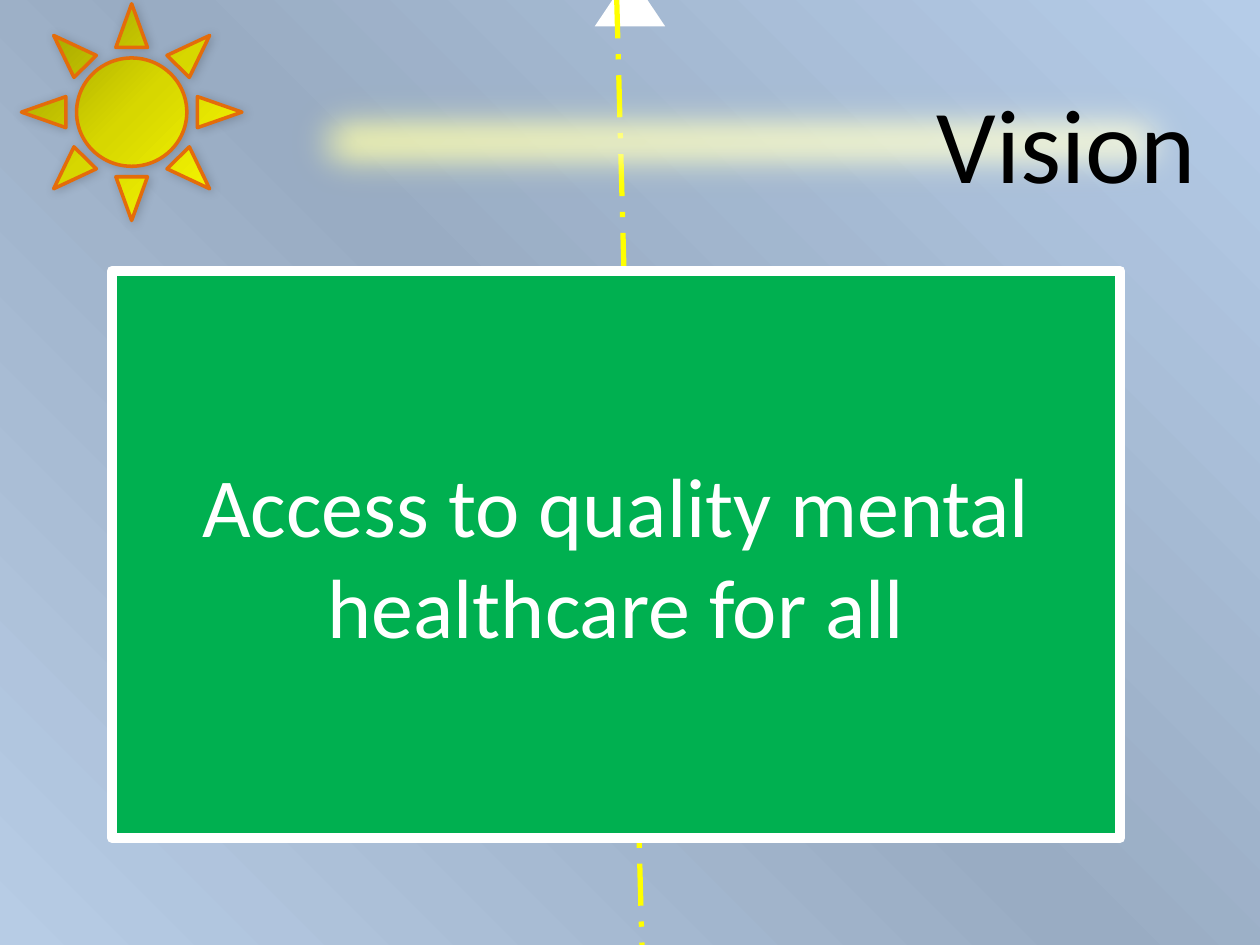
import pptx
import pptx.util
import pptx.dml.color
import pptx.enum.dml
import pptx.enum.shapes
import pptx.enum.text
import pptx.oxml
import pptx.oxml.ns

Inches = pptx.util.Inches
Shapes = pptx.enum.shapes.MSO_SHAPE
Align = pptx.enum.text.PP_ALIGN
Anchor = pptx.enum.text.MSO_ANCHOR
NAMESPACE = pptx.oxml.ns.nsdecls("a")


def color(value):
    """Return the colour for a hex string."""
    return pptx.dml.color.RGBColor.from_string(value)


def set_gradient(shape, colors, angle):
    """Fill a shape with evenly spaced colours along an angle in degrees."""
    step = 100000 // (len(colors) - 1)
    stops = "".join(
        f'<a:gs pos="{index * step}"><a:srgbClr val="{color(value)}"/></a:gs>'
        for index, value in enumerate(colors)
    )
    gradient = pptx.oxml.parse_xml(
        f'<a:gradFill {NAMESPACE} rotWithShape="1"><a:gsLst>{stops}</a:gsLst>'
        f'<a:lin ang="{angle * 60000}" scaled="0"/></a:gradFill>'
    )
    shape.fill.background()
    properties = shape.fill._xPr
    properties.replace(properties.find(pptx.oxml.ns.qn("a:noFill")), gradient)


def set_effect(shape, effect):
    """Replace the effects of a shape or connector with the given XML."""
    properties = shape._element.spPr
    for old in properties.findall(pptx.oxml.ns.qn("a:effectLst")):
        properties.remove(old)
    properties.append(
        pptx.oxml.parse_xml(f"<a:effectLst {NAMESPACE}>{effect}</a:effectLst>")
    )


def add_box(slide, kind, box, fill=None, line=None, width=0):
    """Add a preset shape with a plain fill and a round-joined outline."""
    shape = slide.shapes.add_shape(kind, *(Inches(length) for length in box))
    shape.shadow.inherit = False
    if fill:
        shape.fill.solid()
        shape.fill.fore_color.rgb = color(fill)
    if line:
        shape.line.color.rgb = color(line)
        shape.line.width = pptx.util.Pt(width)
        shape.line._get_or_add_ln().append(
            pptx.oxml.parse_xml(f"<a:round {NAMESPACE}/>")
        )
    else:
        shape.line.fill.background()
    return shape


def add_text(shape, text, size, text_color, alignment, anchor):
    """Write one run of text in a shape."""
    frame = shape.text_frame
    frame.word_wrap = True
    frame.vertical_anchor = anchor
    paragraph = frame.paragraphs[0]
    paragraph.alignment = alignment
    run = paragraph.add_run()
    run.text = text
    run.font.name = "Calibri"
    run.font.size = pptx.util.Pt(size)
    run.font.color.rgb = color(text_color)


def add_sky(slide, box):
    """Add the diagonal blue backdrop."""
    sky = add_box(slide, Shapes.RECTANGLE, box)
    set_gradient(sky, ["B7CCE5", "99ACC3", "B5CCE8"], 315)


def add_road(slide, box):
    """Add the white tip of the road and its dashed centre line."""
    left, top, width, height = box
    tip = add_box(slide, Shapes.TRAPEZOID, box, "FFFFFF")
    tip.adjustments[0] = 0.67
    center = left + width / 2
    line = slide.shapes.add_connector(
        pptx.enum.shapes.MSO_CONNECTOR.STRAIGHT,
        Inches(center + 0.12), Inches(top + 8.44),
        Inches(center - 0.12), Inches(top - 0.56),
    )
    line.line.color.rgb = color("FFFF00")
    line.line.width = pptx.util.Pt(3)
    line.line.dash_style = pptx.enum.dml.MSO_LINE.LONG_DASH_DOT
    set_effect(line, "")


def add_sun(slide, box):
    """Add the yellow sun with its soft shadow."""
    sun = add_box(slide, Shapes.SUN, box, line="E46C0A", width=2)
    set_gradient(sun, ["979700", "D7D700", "FFFF00"], 45)
    set_effect(
        sun,
        '<a:outerShdw blurRad="76200" dist="12700" dir="2700000">'
        '<a:srgbClr val="000000"><a:alpha val="20000"/></a:srgbClr></a:outerShdw>',
    )


def add_title(slide, box, text):
    """Add the title on a soft-edged yellow beam."""
    title = add_box(slide, Shapes.RECTANGLE, box)
    set_gradient(title, ["FFFFA0", "FFFFC5", "FFFFE3"], 45)
    set_effect(title, '<a:softEdge rad="317500"/>')
    add_text(title, text, 60, "000000", Align.RIGHT, Anchor.TOP)


def add_sign(slide, box, text):
    """Add the green road sign with its message."""
    sign = add_box(slide, Shapes.RECTANGLE, box, "00B050", "FFFFFF", 6)
    add_text(sign, text, 48, "FFFFFF", Align.CENTER, Anchor.MIDDLE)


def main():
    """Build and save the vision slide."""
    presentation = pptx.Presentation()
    presentation.slide_width = Inches(10)
    presentation.slide_height = Inches(7.5)
    slide = presentation.slides.add_slide(presentation.slide_layouts[6])
    add_sky(slide, (0, 0, 10, 7.5))
    add_road(slide, (4.72, 0, 0.56, 0.21))
    add_sun(slide, (0.17, 0.03, 1.75, 1.72))
    add_title(slide, (2.17, 0.57, 7.42, 1.11), "Vision")
    add_sign(slide, (0.89, 2.15, 8, 4.5), "Access to quality mental healthcare for all")
    presentation.save("out.pptx")


if __name__ == "__main__":
    main()
